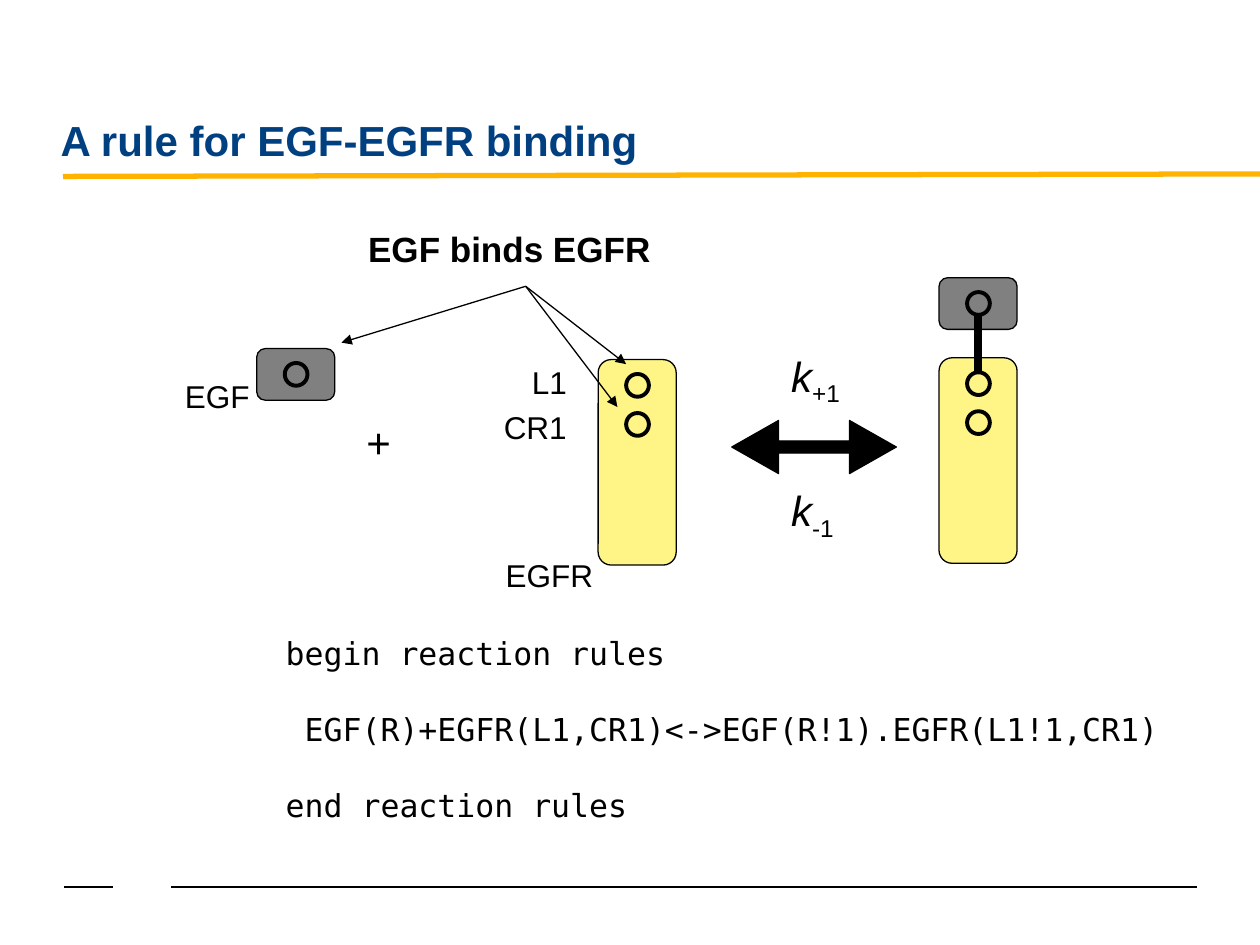
from lxml import etree
from pptx import Presentation, util as u
from pptx.dml import color
from pptx.enum import shapes, text
from pptx.oxml import ns

BLACK, NAVY, AMBER, YELLOW, GRAY = "000000", "004080", "FFB300", "FFF587", "808080"
LABEL = {"size": 18}
RATE = {"size": 24, "italic": True}


def rgb(value):
    return color.RGBColor.from_string(value)


def box(*lengths):
    return [u.Pt(length) for length in lengths]


class RuleSlide:
    """Style and element builders for the current slide."""

    font = {"name": "Arial", "size": 18, "bold": False, "italic": False}
    frame = {"word_wrap": False, "auto_size": text.MSO_AUTO_SIZE.SHAPE_TO_FIT_TEXT}
    protein_size = {"EGF": (44.6, 29.5), "EGFR": (44.6, 117.4)}
    site_left, site_top, site_gap, site_size = 16, 8.2, 22.3, 13

    def __init__(self, deck):
        self.slide = deck.slides.add_slide(deck.slide_layouts[5])

    def style(self, font, ink=BLACK, **changes):
        for name, value in {**self.font, **changes}.items():
            setattr(font, name, u.Pt(value) if name == "size" else value)
        font.color.rgb = rgb(ink)

    def title(self, wording, place):
        heading = self.slide.shapes.title
        for name, value in zip(("left", "top", "width", "height"), box(*place)):
            setattr(heading, name, value)
        heading.text_frame.text = wording
        heading.text_frame.vertical_anchor = text.MSO_ANCHOR.BOTTOM
        line = heading.text_frame.paragraphs[0]
        line.alignment = text.PP_ALIGN.LEFT
        self.style(line.runs[0].font, NAVY, size=24, bold=True)

    def label(self, lines, place, gap=0, subscript=None, wrap=False, **changes):
        frame = self.slide.shapes.add_textbox(*box(*place)).text_frame
        for name, value in {**self.frame, "word_wrap": wrap}.items():
            setattr(frame, name, value)
        for index, wording in enumerate(lines):
            line = frame.add_paragraph() if index else frame.paragraphs[0]
            if index and gap:
                line.space_before = u.Pt(gap)
            run = line.add_run()
            run.text = wording
            self.style(run.font, **changes)
        if subscript:
            index_run = line.add_run()
            index_run.text = subscript
            self.style(index_run.font, **{**changes, "italic": False})
            index_run.font._element.set("baseline", "-25000")

    def shape(self, kind, place, fill=None, weight=0.75, adjust=(), parent=None):
        item = (parent or self.slide).shapes.add_shape(kind, *box(*place))
        item.shadow.inherit = False
        for index, value in enumerate(adjust):
            item.adjustments[index] = value
        if fill:
            item.fill.solid()
            item.fill.fore_color.rgb = rgb(fill)
        else:
            item.fill.background()
        item.line.color.rgb = rgb(BLACK)
        item.line.width = u.Pt(weight)

    def protein(self, kind, left, top, fill, sites):
        group = self.slide.shapes.add_group_shape()
        self.shape(shapes.MSO_SHAPE.ROUNDED_RECTANGLE,
                   (left, top, *self.protein_size[kind]), fill,
                   adjust=[0.167], parent=group)
        for site in range(sites):
            self.shape(shapes.MSO_SHAPE.OVAL,
                       (left + self.site_left, top + self.site_top + site * self.site_gap,
                        self.site_size, self.site_size), weight=2.25, parent=group)

    def line(self, start, end, ink=BLACK, weight=0.75, arrow=False):
        item = self.slide.shapes.add_connector(
            shapes.MSO_CONNECTOR.STRAIGHT, *box(*start, *end))
        item.line.color.rgb = rgb(ink)
        item.line.width = u.Pt(weight)
        if arrow:
            head = etree.SubElement(item.line._get_or_add_ln(), ns.qn("a:tailEnd"))
            head.set("type", "triangle")
        etree.SubElement(item._element.spPr, ns.qn("a:effectLst"))


def main():
    deck = Presentation()
    deck.slide_width, deck.slide_height = box(720, 540)
    page = RuleSlide(deck)

    # Footer rules, title rule and title
    page.line((97.9, 506.9), (684, 506.9))
    page.line((36.7, 506.9), (64.8, 506.9))
    page.line((36, 100.8), (720, 99.4), AMBER, 3)
    page.title("A rule for EGF-EGFR binding", (27.4, 31.7, 656.6, 66.2))
    page.label(["EGF binds EGFR"], (203.3, 126.7, 175.7, 31), size=20, bold=True)

    # Bound complex on the right
    page.protein("EGFR", 536.6, 204.5, YELLOW, 2)
    page.protein("EGF", 536.6, 158.7, GRAY, 1)
    page.line((558.9, 180.7), (558.9, 212.4), weight=4.5)

    # Free ligand and receptor on the left
    page.protein("EGFR", 341.8, 205.5, YELLOW, 2)
    page.protein("EGF", 146.7, 199.2, GRAY, 1)
    for name, place in {
        "EGF": (98.6, 211.7, 51.8, 29),
        "EGFR": (281.9, 313.9, 64.8, 29),
        "L1": (296.9, 203.8, 34.6, 29),
        "CR1": (280.8, 229.7, 50.4, 29),
    }.items():
        page.label([name], place, **LABEL)
    page.label(["+"], (202.3, 234.7, 28.8, 36), size=24)

    # Reversible reaction with its rate constants
    page.shape(shapes.MSO_SHAPE.LEFT_RIGHT_ARROW, (418.2, 240.3, 94, 30.3), BLACK,
               adjust=[0.229, 0.882])
    for sign, top in (("+1", 196.6), ("-1", 273.6)):
        page.label(["k"], (445, top, 44, 36), subscript=sign, **RATE)

    # Pointers from the heading to the binding sites
    for target in ((195.1, 195.8), (357.8, 208.1), (352.8, 232.6)):
        page.line((300.4, 163.6), target, arrow=True)

    # Rule as code
    page.label(["begin reaction rules",
                " EGF(R)+EGFR(L1,CR1)<->EGF(R!1).EGFR(L1!1,CR1)",
                "end reaction rules"],
               (156.2, 358.6, 548.6, 115.2), gap=22, wrap=True, name="DejaVu Sans Mono")

    deck.save("out.pptx")


if __name__ == "__main__":
    main()
